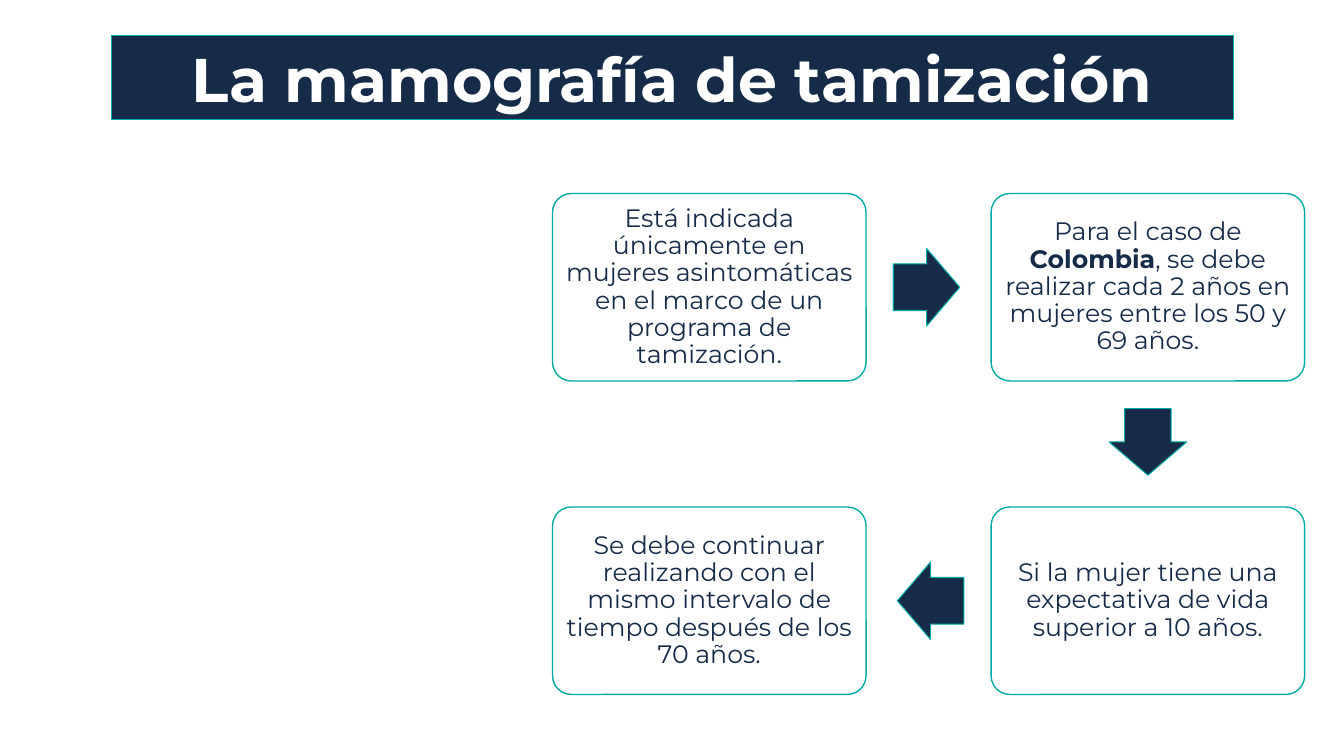
"""Build the slide on screening mammography as a four-step flow."""
from pptx import Presentation
from pptx.dml.color import RGBColor
from pptx.enum.shapes import MSO_SHAPE as Shape
from pptx.enum.text import MSO_ANCHOR as Anchor, MSO_AUTO_SIZE as AutoSize, PP_ALIGN as Align
from pptx.util import Inches, Pt

TITLE = "La mamografía de tamización"
STEPS = [
    {"cell": (0, 0), "spans": [
        ("Está indicada únicamente en mujeres asintomáticas en el marco de un "
         "programa de tamización.", False)]},
    {"cell": (1, 0), "spans": [
        ("Para el caso de ", False), ("Colombia", True),
        (", se debe realizar cada 2 años en mujeres entre los 50 y 69 años.", False)]},
    {"cell": (1, 1), "spans": [
        ("Si la mujer tiene una expectativa de vida superior a 10 años.", False)]},
    {"cell": (0, 1), "spans": [
        ("Se debe continuar realizando con el mismo intervalo de tiempo después "
         "de los 70 años.", False)]},
]
TURNS = {(1, 0): 0, (0, 1): 90, (-1, 0): 180}

NAVY, TEAL, WHITE = "152B48", "00AAA7", "FFFFFF"
FONT = "Montserrat"
GRID_LEFT, GRID_TOP = 5.48, 1.92
CARD_W, CARD_H = 3.11, 1.86
PITCH_X, PITCH_Y = 4.35, 3.11
ARROW_W, ARROW_H, ARROW_SHIFT = 0.66, 0.77, 0.02


def color(value):
    return RGBColor.from_string(value)


def paint(shape, fill, width):
    shape.fill.solid()
    shape.fill.fore_color.rgb = color(fill)
    shape.line.color.rgb = color(TEAL)
    shape.line.width = Pt(width)


def write(shape, spans, size, ink, inset, spacing):
    frame = shape.text_frame
    frame.word_wrap = True
    frame.auto_size = AutoSize.NONE
    frame.vertical_anchor = Anchor.MIDDLE
    frame.margin_left = frame.margin_right = Inches(inset)
    frame.margin_top = frame.margin_bottom = Inches(min(inset, 0.07))
    para = frame.paragraphs[0]
    para.alignment = Align.CENTER
    para.line_spacing = spacing
    for text, bold in spans:
        span = para.add_run()
        span.text = text
        span.font.name = FONT
        span.font.size = Pt(size)
        span.font.bold = bold
        span.font.color.rgb = color(ink)


def add_shape(page, kind, center, size, adjustments, fill, width):
    left, top = (middle - length / 2 for middle, length in zip(center, size))
    shape = page.shapes.add_shape(
        kind, Inches(left), Inches(top), Inches(size[0]), Inches(size[1]))
    for index, value in enumerate(adjustments):
        shape.adjustments[index] = value
    shape.shadow.inherit = False
    paint(shape, fill, width)
    return shape


def card_center(cell):
    column, row = cell
    return (GRID_LEFT + column * PITCH_X + CARD_W / 2,
            GRID_TOP + row * PITCH_Y + CARD_H / 2)


def add_arrow(page, start, end):
    direction = tuple(b - a for a, b in zip(start, end))
    center = [(a + b) / 2 - ARROW_SHIFT * step for a, b, step in
              zip(card_center(start), card_center(end), direction)]
    arrow = add_shape(page, Shape.RIGHT_ARROW, center, (ARROW_W, ARROW_H),
                      (0.6, 0.5), NAVY, 0.75)
    arrow.rotation = TURNS[direction]


def main():
    deck = Presentation()
    deck.slide_width, deck.slide_height = Inches(13.33), Inches(7.5)
    page = deck.slides.add_slide(deck.slide_layouts[5])

    title = page.shapes.title
    title.left, title.top = Inches(1.11), Inches(0.35)
    title.width, title.height = Inches(11.12), Inches(0.84)
    paint(title, NAVY, 0.75)
    write(title, [(TITLE, True)], size=44, ink=WHITE, inset=0.1, spacing=1.0)

    for step in STEPS:
        card = add_shape(page, Shape.ROUNDED_RECTANGLE, card_center(step["cell"]),
                         (CARD_W, CARD_H), (0.1,), WHITE, 1)
        write(card, step["spans"], size=18, ink=NAVY, inset=0.07, spacing=0.9)
    for step, following in zip(STEPS, STEPS[1:]):
        add_arrow(page, step["cell"], following["cell"])

    deck.save("out.pptx")


if __name__ == "__main__":
    main()
